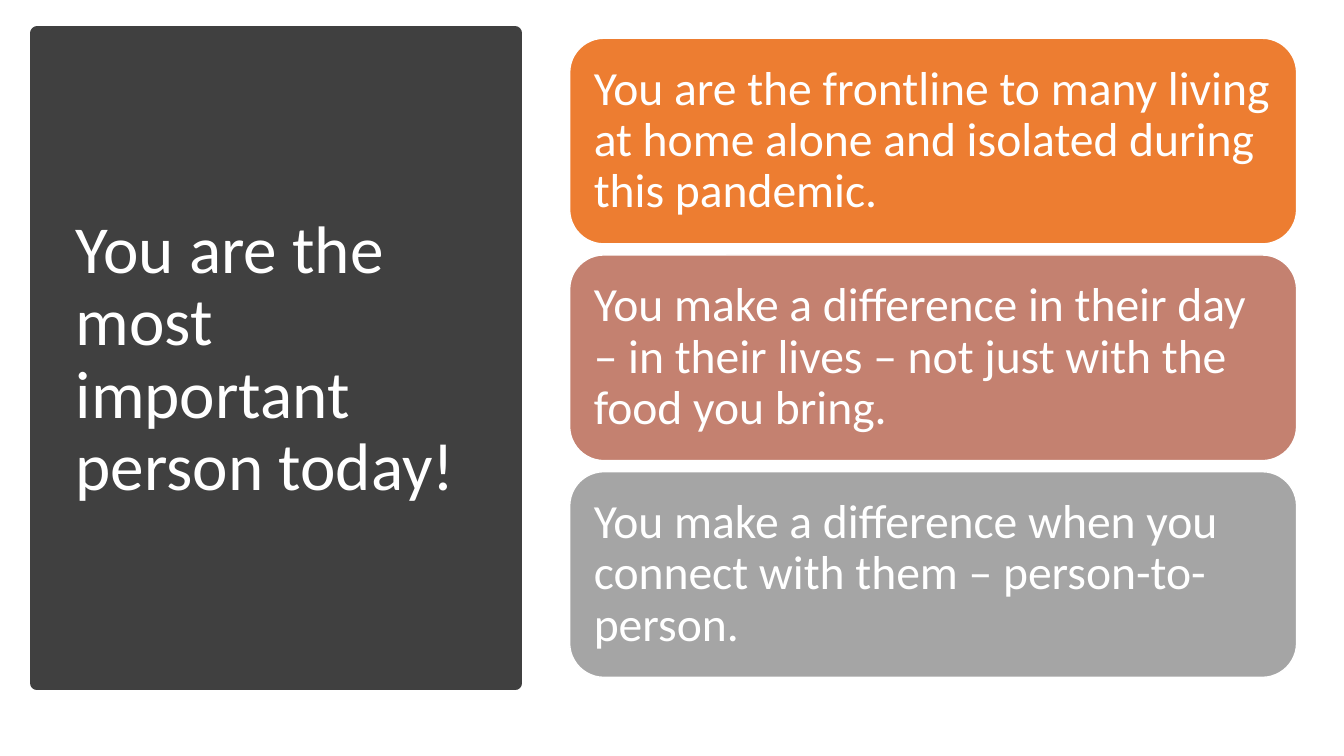
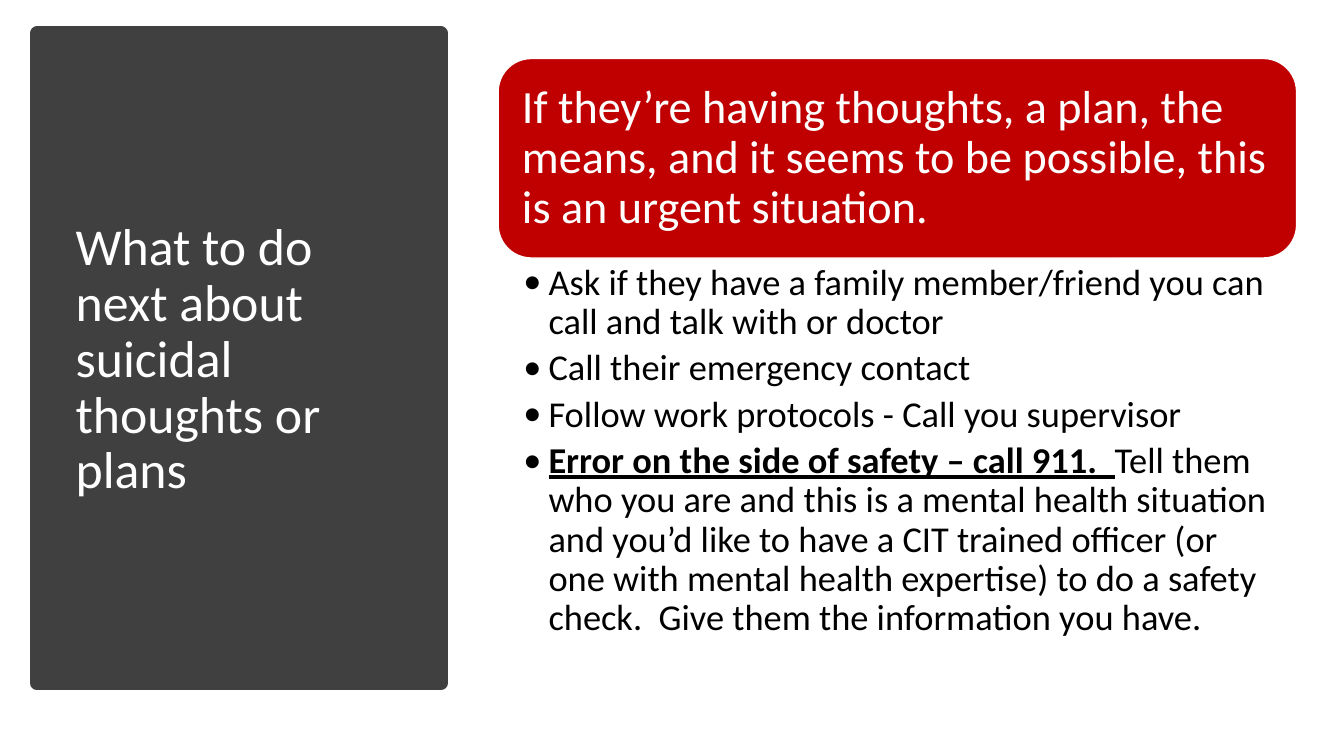
from dataclasses import dataclass

from lxml.etree import SubElement
from pptx import Presentation
from pptx.dml.color import RGBColor as RGB
from pptx.enum.shapes import MSO_SHAPE as SHAPE
from pptx.enum.text import MSO_ANCHOR as ANCHOR, MSO_AUTO_SIZE as AUTO, PP_ALIGN as ALIGN
from pptx.oxml.ns import qn
from pptx.util import Inches, Pt


@dataclass(frozen=True)
class Theme:
    font: str = "Calibri"
    white: str = "FFFFFF"
    black: str = "000000"
    panel: str = "404040"
    orange: str = "ED7D31"
    rose: str = "C48170"
    gray: str = "A5A5A5"
    red: str = "C00000"
    title: int = 48
    long_title: int = 37
    card: int = 34
    alert: int = 33
    bullet: int = 26
    bullet_gap: int = 5
    leading: float = 0.9


def set_all(obj, values):
    for name, value in values.items():
        setattr(obj, name, value)


class Deck:
    def __init__(self, theme):
        self.theme = theme
        self.prs = Presentation()
        set_all(self.prs, {"slide_width": Inches(13.33), "slide_height": Inches(7.5)})
        self.s = None

    def frame(self, sp, anchor, insets=(0.1, 0.05, 0.1, 0.05)):
        left, top, right, bottom = map(Inches, insets)
        tf = sp.text_frame
        set_all(tf, {
            "word_wrap": True, "auto_size": AUTO.NONE, "vertical_anchor": anchor,
            "margin_left": left, "margin_top": top,
            "margin_right": right, "margin_bottom": bottom,
        })
        return tf

    def fill_paragraph(self, p, runs, size, color):
        set_all(p, {"alignment": ALIGN.LEFT, "line_spacing": self.theme.leading})
        for text, extra in runs:
            r = p.add_run()
            r.text = text
            set_all(r.font, {"name": self.theme.font, "size": Pt(size), **extra})
            r.font.color.rgb = RGB.from_string(color)

    def shape(self, kind, box, fill, line, width):
        sp = self.s.shapes.add_shape(kind, *map(Inches, box))
        sp.shadow.inherit = False
        sp.fill.solid()
        sp.fill.fore_color.rgb = RGB.from_string(fill)
        sp.line.color.rgb = RGB.from_string(line)
        sp.line.width = Pt(width)
        return sp

    def titled_slide(self, text, size, panel_width, title_width):
        t = self.theme
        self.s = self.prs.slides.add_slide(self.prs.slide_layouts[5])
        title = self.s.shapes.title
        panel = self.shape(SHAPE.RECTANGLE, (0.37, 0.33, panel_width, 6.45), t.panel, t.panel, 10)
        title.element.addprevious(panel.element)
        set_all(title, {
            "left": Inches(0.65), "top": Inches(0.7),
            "width": Inches(title_width), "height": Inches(5.75),
        })
        tf = self.frame(title, ANCHOR.MIDDLE)
        self.fill_paragraph(tf.paragraphs[0], [(text, {})], size, t.white)

    def card(self, text, box, fill, size):
        t = self.theme
        sp = self.shape(SHAPE.ROUNDED_RECTANGLE, box, fill, t.white, 1)
        tf = self.frame(sp, ANCHOR.MIDDLE, (0.14,) * 4)
        self.fill_paragraph(tf.paragraphs[0], [(text, {})], size, t.white)

    def bullets(self, items, box):
        t = self.theme
        sp = self.s.shapes.add_textbox(*map(Inches, box))
        tf = self.frame(sp, ANCHOR.TOP, (0.25, 0.05, 0.26, 0.05))
        for i, runs in enumerate(items):
            p = tf.add_paragraph() if i else tf.paragraphs[0]
            self.fill_paragraph(p, runs, t.bullet, t.black)
            p.space_after = Pt(t.bullet_gap)
            pPr = p._p.get_or_add_pPr()
            pPr.set("marL", str(Inches(0.25)))
            pPr.set("indent", str(-Inches(0.25)))
            SubElement(pPr, qn("a:buFont")).set("typeface", t.font)
            SubElement(pPr, qn("a:buChar")).set("char", "•")


def importance_slide(deck):
    t = deck.theme
    deck.titled_slide("You are the most important person today!", t.title, 4.74, 4.16)
    cards = [
        ("You are the frontline to many living at home alone and isolated during this pandemic.",
         t.orange),
        ("You make a difference in their day – in their lives – not just with the food you bring.",
         t.rose),
        ("You make a difference when you connect with them – person-to-person.", t.gray),
    ]
    top, height, pitch = 0.38, 2.04, 2.15
    for i, (text, fill) in enumerate(cards):
        deck.card(text, (5.65, top + i * pitch, 7.21, height), fill, t.card)


def next_steps_slide(deck):
    t = deck.theme
    deck.titled_slide("What to do next about suicidal thoughts or plans", t.long_title, 4, 3.46)
    deck.card(
        "If they’re having thoughts, a plan, the means, and it seems to be possible, "
        "this is an urgent situation.",
        (4.94, 0.58, 7.92, 1.98), t.red, t.alert)
    deck.bullets([
        [("Ask if they have a family member/friend you can call and talk with or doctor", {})],
        [("Call their emergency contact", {})],
        [("Follow work protocols - Call you supervisor", {})],
        [("Error on the side of safety – call 911.  ", {"bold": True, "underline": True}),
         ("Tell them who you are and this is a mental health situation and you’d like to have "
          "a CIT trained officer (or one with mental health expertise) to do a safety check.  "
          "Give them the information you have.", {})],
    ], (4.94, 2.57, 7.92, 3.96))


def main():
    deck = Deck(Theme())
    importance_slide(deck)
    next_steps_slide(deck)
    deck.prs.save("out.pptx")


if __name__ == "__main__":
    main()
